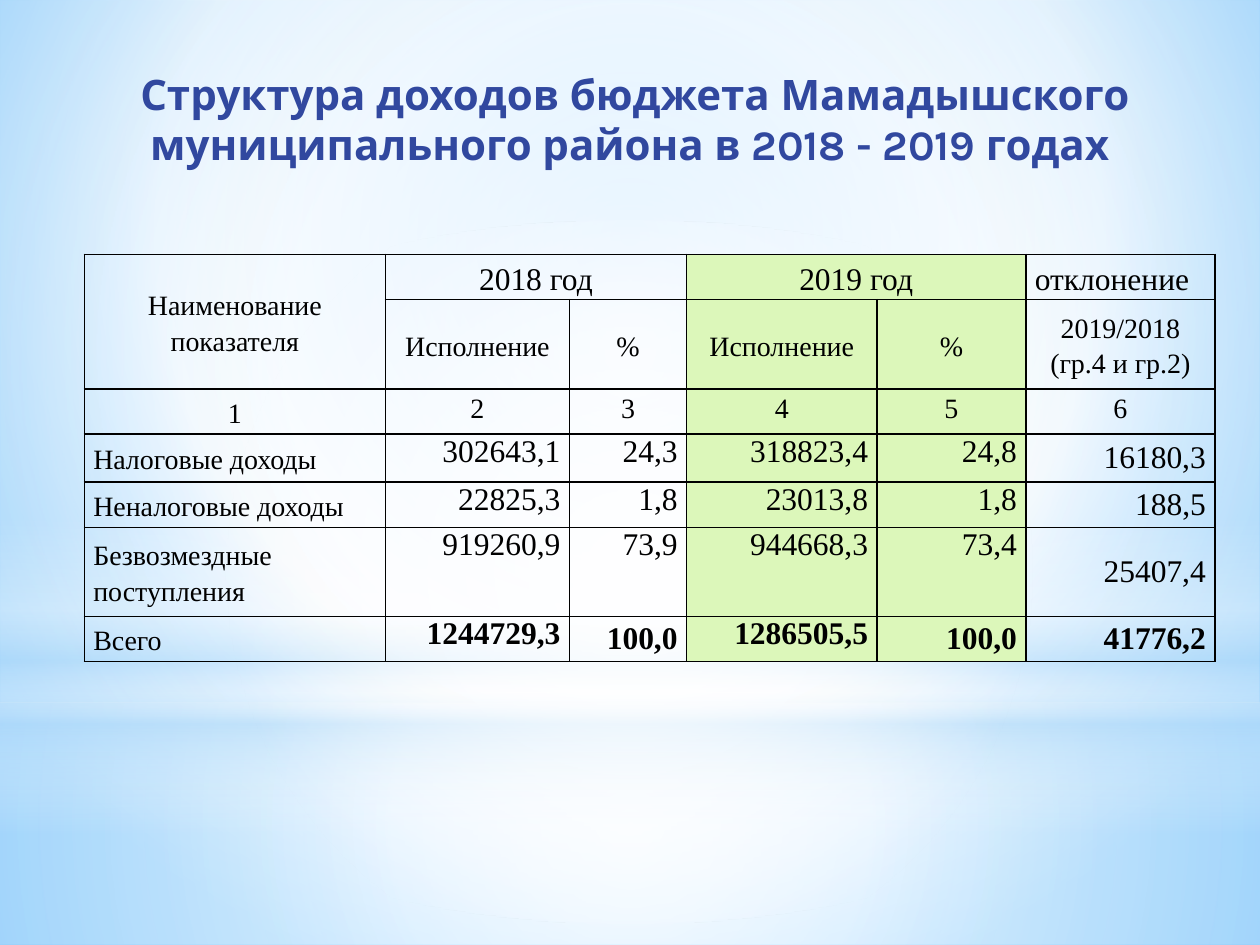
import pptx
import pptx.util
import pptx.dml.color
import pptx.enum.shapes
import pptx.enum.text
import pptx.oxml
import pptx.oxml.ns

Cm = pptx.util.Cm
Pt = pptx.util.Pt
RGB = pptx.dml.color.RGBColor
Align = pptx.enum.text.PP_ALIGN
Anchor = pptx.enum.text.MSO_ANCHOR
Form = pptx.enum.shapes.MSO_SHAPE
qn = pptx.oxml.ns.qn

NAVY = RGB(0x31, 0x48, 0x9F)
BLACK = RGB(0, 0, 0)
GREEN = RGB(0xDC, 0xF7, 0xBA)
WHITE = RGB(255, 255, 255)
PALE = RGB(0xB4, 0xDC, 0xFA)
SKY = RGB(0x9E, 0xD5, 0xFF)
BLUE = RGB(0x5B, 0xB9, 0xFF)

TITLE = "Структура доходов бюджета Мамадышского муниципального района в 2018 - 2019 годах "
ROWS = [
    ["Наименование показателя", "2018 год", None, "2019 год", None, "отклонение"],
    [None, "Исполнение", "%", "Исполнение", "%", "2019/2018\n(гр.4 и гр.2)"],
    ["1", "2", "3", "4", "5", "6"],
    ["Налоговые доходы", "302643,1", "24,3", "318823,4", "24,8", "16180,3"],
    ["Неналоговые доходы", "22825,3", "1,8", "23013,8", "1,8", "188,5"],
    ["Безвозмездные поступления", "919260,9", "73,9", "944668,3", "73,4", "25407,4"],
    ["Всего", "1244729,3", "100,0", "1286505,5", "100,0", "41776,2"],
]
MERGES = [((0, 0), (1, 0)), ((0, 1), (0, 2)), ((0, 3), (0, 4))]
WIDTHS = [6.07, 3.71, 2.36, 3.84, 3, 3.81]
HEIGHTS = [0.91, 1.8, 0.91, 0.97, 0.91, 1.8, 0.91]

MID = (50, 50, 50, 50)
BACK = [(0, SKY, 100), (60, WHITE, 100), (100, BLUE, 100)]
LAYERS = [
    (Form.RECTANGLE, 14.17, 4.88, MID,
     [(0, WHITE, 91), (37, WHITE, 76), (100, PALE, 79)]),
    (Form.RECTANGLE, 0, 14.17, MID,
     [(0, WHITE, 89), (48, WHITE, 62), (100, PALE, 79)]),
    (Form.RECTANGLE, 10.46, 6.35, None,
     [(0, WHITE, 0), (29, WHITE, 30), (45, PALE, 40),
      (55, WHITE, 26), (65, PALE, 60), (100, WHITE, 0)]),
    (Form.OVAL, 4.45, 14.17, MID, [(0, WHITE, 100), (56, WHITE, 0)]),
]


def blend(root, stops, focus):
    solid = root.find(".//" + qn("a:solidFill"))
    marks = "".join(
        f'<a:gs pos="{pos * 1000}"><a:srgbClr val="{hue}">'
        f'<a:alpha val="{alpha * 1000}"/></a:srgbClr></a:gs>'
        for pos, hue, alpha in stops)
    if focus:
        rect = " ".join(f'{side}="{part * 1000}"' for side, part in zip("ltrb", focus))
        way = f'<a:path path="circle"><a:fillToRect {rect}/></a:path>'
    else:
        way = '<a:lin ang="5400000" scaled="0"/>'
    grad = pptx.oxml.parse_xml(
        f'<a:gradFill {pptx.oxml.ns.nsdecls("a")} rotWithShape="1">'
        f'<a:gsLst>{marks}</a:gsLst>{way}</a:gradFill>')
    solid.getparent().replace(solid, grad)


def border(cell):
    props = cell._tc.get_or_add_tcPr()
    for spot, side in enumerate("LRTB"):
        props.insert(spot, pptx.oxml.parse_xml(
            f'<a:ln{side} {pptx.oxml.ns.nsdecls("a")} w="12700"><a:solidFill>'
            f'<a:srgbClr val="{BLACK}"/></a:solidFill></a:ln{side}>'))


def style(par, face, size, hue, bold):
    par.font.name = face
    par.font.size = Pt(size)
    par.font.color.rgb = hue
    par.font.bold = bold


def write(cell, text, row, col):
    head = row < 3
    cell.text = text
    middle = row < 2 or col == 0 or (col == 5 and row > 2)
    cell.vertical_anchor = Anchor.MIDDLE if middle else Anchor.TOP
    if (row, col) == (0, 5):
        align = Align.JUSTIFY
    elif head:
        align = Align.CENTER
    else:
        align = Align.RIGHT if col else Align.LEFT
    large = col > 0 and row not in (1, 2)
    for par in cell.text_frame.paragraphs:
        par.alignment = align
        if head or col == 0 or text == "100,0":
            par.line_spacing = 1.15
        style(par, "Times New Roman", 18 if large else 16, BLACK, row == 6 and col > 0)


def main():
    deck = pptx.Presentation()
    deck.slide_width, deck.slide_height = Cm(25.4), Cm(19.05)
    slide = deck.slides.add_slide(deck.slide_layouts[6])
    slide.background.fill.solid()
    slide.background.fill.fore_color.rgb = WHITE
    blend(slide._element, BACK, (20, 10, 20, 60))

    for form, top, high, focus, stops in LAYERS:
        layer = slide.shapes.add_shape(form, 0, Cm(top), deck.slide_width, Cm(high))
        layer.shadow.inherit = False
        layer.line.fill.background()
        layer.fill.solid()
        layer.fill.fore_color.rgb = WHITE
        blend(layer._element, stops, focus)

    box = slide.shapes.add_textbox(Cm(1.3), Cm(1.32), Cm(23.01), Cm(2.21))
    frame = box.text_frame
    frame.word_wrap = True
    frame.vertical_anchor = Anchor.BOTTOM
    frame.text = TITLE
    par = frame.paragraphs[0]
    par.alignment = Align.CENTER
    style(par, "Karla", 24, NAVY, True)

    table = slide.shapes.add_table(
        len(ROWS), len(WIDTHS), Cm(1.7), Cm(5.13),
        Cm(sum(WIDTHS)), Cm(sum(HEIGHTS))).table
    table.first_row = table.horz_banding = False
    for col, wide in zip(table.columns, WIDTHS):
        col.width = Cm(wide)
    for row, high in zip(table.rows, HEIGHTS):
        row.height = Cm(high)
    for start, end in MERGES:
        table.cell(*start).merge(table.cell(*end))
    for row, line in enumerate(ROWS):
        for col, text in enumerate(line):
            cell = table.cell(row, col)
            cell.margin_left = cell.margin_right = Cm(0.18)
            cell.margin_top = cell.margin_bottom = 0
            if col in (3, 4):
                cell.fill.solid()
                cell.fill.fore_color.rgb = GREEN
            else:
                cell.fill.background()
            border(cell)
            if text:
                write(cell, text, row, col)

    deck.save("out.pptx")


if __name__ == "__main__":
    main()
